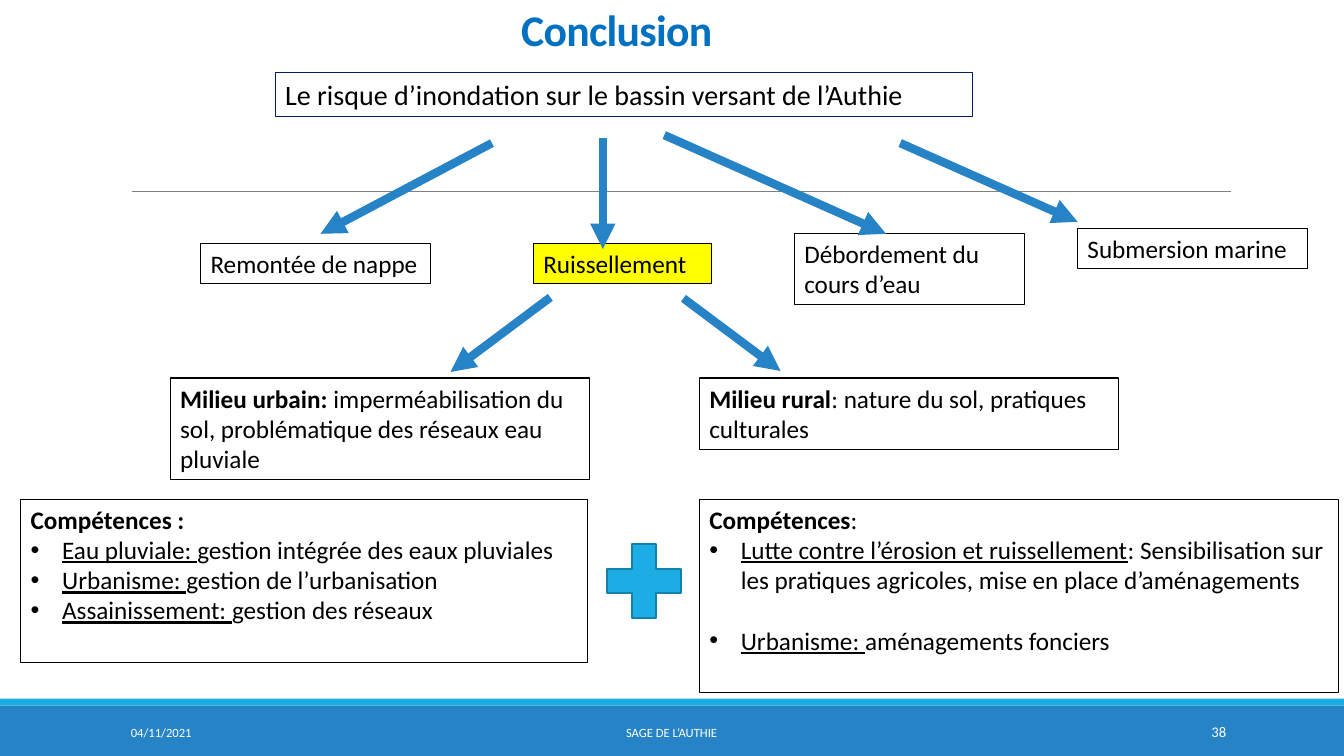
from lxml import etree
from pptx import Presentation
from pptx.dml.color import RGBColor
from pptx.enum import shapes, text
from pptx.oxml import ns
from pptx.util import Pt

BLUE = RGBColor(0x26, 0x83, 0xC6)
CYAN = RGBColor(0x1C, 0xAD, 0xE4)
DARK_CYAN = RGBColor(0x15, 0x80, 0xA9)
TITLE_BLUE = RGBColor(0x00, 0x70, 0xC0)
NAVY = RGBColor(0x00, 0x20, 0x60)
GREY = RGBColor(0x80, 0x80, 0x80)
YELLOW = RGBColor(0xFF, 0xFF, 0x00)
WHITE = RGBColor(0xFF, 0xFF, 0xFF)
BLACK = RGBColor(0x00, 0x00, 0x00)

LEFT, CENTER, RIGHT = text.PP_ALIGN.LEFT, text.PP_ALIGN.CENTER, text.PP_ALIGN.RIGHT
TOP, MIDDLE, BOTTOM = text.MSO_ANCHOR.TOP, text.MSO_ANCHOR.MIDDLE, text.MSO_ANCHOR.BOTTOM

presentation = Presentation()
presentation.slide_width = Pt(960)
presentation.slide_height = Pt(540)
slide = presentation.slides.add_slide(presentation.slide_layouts[6])


def add_text(place, paragraphs, size=18, color=BLACK, align=LEFT, anchor=TOP):
    """Each paragraph is a list of (wording, style); style holds b for bold, u for underline."""
    box = slide.shapes.add_textbox(*map(Pt, place))
    frame = box.text_frame
    frame.word_wrap = True
    frame.vertical_anchor = anchor
    for index, runs in enumerate(paragraphs):
        paragraph = frame.paragraphs[0] if index == 0 else frame.add_paragraph()
        paragraph.alignment = align
        for wording, style in runs:
            run = paragraph.add_run()
            run.text = wording
            run.font.name = "Calibri"
            run.font.size = Pt(size)
            run.font.color.rgb = color
            run.font.bold = "b" in style
            run.font.underline = "u" in style
    return box


def add_line(start, end, color, width):
    line = slide.shapes.add_connector(
        shapes.MSO_CONNECTOR.STRAIGHT, *map(Pt, start + end))
    line.line.color.rgb = color
    line.line.width = Pt(width)
    etree.SubElement(line._element.spPr, ns.qn("a:effectLst"))
    return line


# Footer bands and rule
for top, height, color in [(504, 36, BLUE), (499, 5, CYAN)]:
    band = slide.shapes.add_shape(
        shapes.MSO_SHAPE.RECTANGLE, 0, Pt(top), presentation.slide_width, Pt(height))
    band.shadow.inherit = False
    band.fill.solid()
    band.fill.fore_color.rgb = color
    band.line.fill.background()
add_line((94.3, 136.8), (879, 136.8), GREY, 0.5)

# Footer texts
for left, width, wording, size, align in [
    (86.4, 194.4, "04/11/2021", 9, LEFT),
    (290, 379.4, "SAGE DE L’AUTHIE", 9, CENTER),
    (780, 103, "38", 10.5, RIGHT),
]:
    add_text((left, 508.5, width, 28.8), [[(wording, "")]], size, WHITE, align, MIDDLE)

# Title
title = add_text((44.6, 2.9, 792, 40.3), [[("Conclusion", "b")]],
                 31.2, TITLE_BLUE, CENTER, BOTTOM)
title_paragraph = title.text_frame.paragraphs[0]
title_paragraph.line_spacing = 0.85
title_paragraph.runs[0].font._element.set("spc", "-50")

# Framed boxes of the diagram
risk = add_text((196.6, 51.8, 498.2, 31.7),
                [[("Le risque d’inondation sur le bassin versant de l’Authie", "")]], 20)
runoff = add_text((381, 173.8, 127.4, 28.8), [[("Ruissellement", "")]])
overflow = add_text((567.4, 166.8, 164.2, 51), [[("Débordement du cours d’eau", "")]])
groundwater = add_text((143.3, 173.8, 164.2, 28.8), [[("Remontée de nappe", "")]])
marine = add_text((769.7, 163.2, 164.2, 28.8), [[("Submersion marine", "")]])
rural = add_text((499.6, 270, 299.5, 51), [
    [("Milieu rural", "b"), (": nature du sol, pratiques culturales", "")]])
urban = add_text((121.6, 270, 299.5, 72.7), [
    [("Milieu urbain: ", "b"),
     ("imperméabilisation du sol, problématique des réseaux eau pluviale", "")]])
urban_skills = add_text((14.8, 356.5, 405, 116.6), [
    [("Compétences :", "b")],
    [("Eau pluviale: ", "u"), ("gestion intégrée des eaux pluviales", "")],
    [("Urbanisme: ", "u"), ("gestion de l’urbanisation", "")],
    [("Assainissement: ", "u"), ("gestion des réseaux", "")],
])
rural_skills = add_text((499.6, 356.5, 456.5, 138), [
    [("Compétences", "b"), (":", "")],
    [("Lutte contre l’érosion et ruissellement", "u"),
     (": Sensibilisation sur les pratiques agricoles, mise en place d’aménagements", "")],
    [("Urbanisme: ", "u"), ("aménagements fonciers", "")],
])

for box in (risk, runoff, overflow, groundwater, marine,
            rural, urban, urban_skills, rural_skills):
    box.line.color.rgb = BLACK
    box.line.width = Pt(0.75)
risk.line.color.rgb = NAVY
for box, color in [(risk, WHITE), (runoff, YELLOW)]:
    box.fill.solid()
    box.fill.fore_color.rgb = color

for box in (urban_skills, rural_skills):
    for paragraph in box.text_frame.paragraphs[1:]:
        properties = paragraph._p.get_or_add_pPr()
        properties.set("marL", str(Pt(22.5)))
        properties.set("indent", str(Pt(-22.5)))
        etree.SubElement(properties, ns.qn("a:buFont")).set("typeface", "Arial")
        etree.SubElement(properties, ns.qn("a:buChar")).set("char", "•")
rural_skills.text_frame.paragraphs[-1].space_before = Pt(21.6)

# Arrows
for start, end in [
    ((430.6, 98.6), (430.6, 177.8)),
    ((474.5, 96.5), (632.9, 167)),
    ((488.2, 213.1), (557.6, 265)),
    ((393.1, 212.4), (321.8, 265.7)),
    ((351.4, 102.2), (229, 167)),
    ((643, 102.2), (769.7, 158.4)),
]:
    arrow = add_line(start, end, BLUE, 6)
    etree.SubElement(arrow.line._get_or_add_ln(), ns.qn("a:tailEnd")).set("type", "triangle")

# Plus sign between the two sets of skills
plus = slide.shapes.add_shape(
    shapes.MSO_SHAPE.MATH_PLUS, Pt(424.1), Pt(378.9), Pt(72), Pt(72))
plus.shadow.inherit = False
plus.fill.solid()
plus.fill.fore_color.rgb = CYAN
plus.line.color.rgb = DARK_CYAN
plus.line.width = Pt(1.25)

presentation.save("out.pptx")
